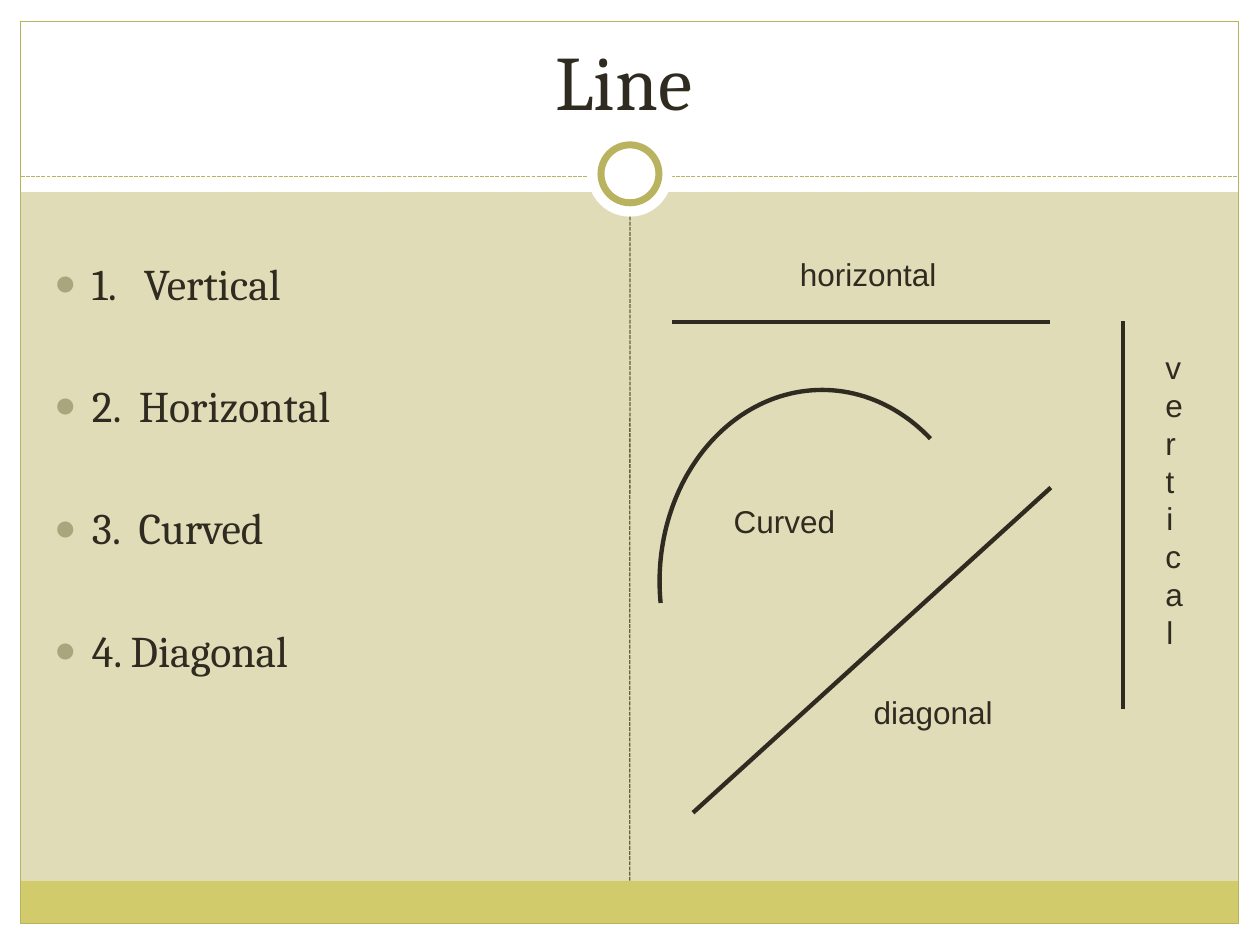
"""Build the "Line" slide: a list of line types beside a drawn example of each."""
import lxml.etree
import pptx
import pptx.dml.color
import pptx.enum.dml
import pptx.enum.shapes
import pptx.enum.text
import pptx.oxml.ns
import pptx.util

COLOURS = {"sand": "DFDCB7", "white": "FFFFFF", "band": "D2CB6C", "olive": "B9B35F",
           "brown": "675E47", "ink": "2F2B20", "bullet": "A9A57C"}
COLOURS_RGB = {name: pptx.dml.color.RGBColor.from_string(value) for name, value in COLOURS.items()}
SHAPES = pptx.enum.shapes.MSO_SHAPE
ALIGN = pptx.enum.text.PP_ALIGN
SYSTEM_DASH = pptx.enum.dml.MSO_LINE.SQUARE_DOT

presentation = pptx.Presentation()
presentation.slide_width = pptx.util.Inches(10)
presentation.slide_height = pptx.util.Inches(7.5)
column = presentation.slide_width / 100
row = presentation.slide_height / 75

slide = presentation.slides.add_slide(presentation.slide_layouts[1])
slide.background.fill.solid()
slide.background.fill.fore_color.rgb = COLOURS_RGB["white"]


def grid(left, top, width, height):
    """Turn columns and rows into slide lengths."""
    return [int(left * column), int(top * row), int(width * column), int(height * row)]


def write(shape, text, size, font, **paragraph_format):
    """Fill a shape with one formatted paragraph per item of text."""
    frame = shape.text_frame
    frame.word_wrap = True
    frame.auto_size = pptx.enum.text.MSO_AUTO_SIZE.NONE
    frame.text = text
    for paragraph in frame.paragraphs:
        for name, value in paragraph_format.items():
            setattr(paragraph, name, value)
        for name, value in {"size": pptx.util.Pt(size), "name": font}.items():
            setattr(paragraph.font, name, value)
        paragraph.font.color.rgb = COLOURS_RGB["ink"]
    return frame.paragraphs


margin, right_edge, header, footer = 1.65, 98.3, 15.25, 69.9
inner_width = right_edge - margin
middle = 50
shapes = {}
for name, kind, place, fill, line, weight in [
    ("panel", SHAPES.RECTANGLE, (margin, header, inner_width, footer - header), "sand", None, 0),
    ("footer", SHAPES.RECTANGLE, (margin, footer, inner_width, 3.4), "band", None, 0),
    ("frame", SHAPES.RECTANGLE, (margin, 1.7, inner_width, 71.6), None, "olive", 0.75),
    ("header rule", None, (margin, 14, right_edge, 14), None, "olive", 0.75),
    ("disc", SHAPES.OVAL, (middle - 3.35, 10.5, 6.7, 6.7), "white", None, 0),
    ("ring", SHAPES.OVAL, (middle - 2.3, 11.5, 4.6, 4.6), "white", "olive", 4),
    ("divider", None, (49.9, footer, middle, 17.2), None, "brown", 0.75),
    ("horizontal", None, (53.35, 25.55, 83.35, 25.55), None, "ink", 2.5),
    ("vertical", None, (89.15, 25.5, 89.15, 56.3), None, "ink", 2.5),
    ("diagonal", None, (55, 64.5, 83.4, 38.7), None, "ink", 2.5),
    ("curve", SHAPES.ARC, (52.35, 30.95, 25.8, 30.4), None, "ink", 2.5),
]:
    if kind is None:
        shape = slide.shapes.add_connector(pptx.enum.shapes.MSO_CONNECTOR.STRAIGHT, *grid(*place))
    else:
        shape = slide.shapes.add_shape(kind, *grid(*place))
        shape.shadow.inherit = False
        if fill:
            shape.fill.solid()
            shape.fill.fore_color.rgb = COLOURS_RGB[fill]
        else:
            shape.fill.background()
    if line:
        shape.line.color.rgb = COLOURS_RGB[line]
        shape.line.width = pptx.util.Pt(weight)
    else:
        shape.line.fill.background()
    if name in ("header rule", "divider"):
        shape.line.dash_style = SYSTEM_DASH
    if kind is None:
        lxml.etree.SubElement(shape._element.spPr, pptx.oxml.ns.qn("a:effectLst"))
    shapes[name] = shape

shapes["divider"].begin_connect(shapes["footer"], 0)
degree = 0.6
for index, angle in enumerate((172.4, 307.2)):
    shapes["curve"].adjustments[index] = angle * degree

title, body = slide.shapes.title, slide.placeholders[1]
for placeholder, place in ((title, (4.5, 1.8, 90, 9)), (body, (3.3, 19.85, 44.2, 46.3))):
    placeholder.left, placeholder.top, placeholder.width, placeholder.height = grid(*place)
    slide.shapes.element.append(placeholder._element)

write(title, "Line", 44, "Cambria", alignment=ALIGN.CENTER)
title.text_frame.vertical_anchor = pptx.enum.text.MSO_ANCHOR.MIDDLE

items = ["1.\tVertical", "2.\tHorizontal", "3.\tCurved", "4. Diagonal"]
tab_columns = [7.12, 6.72, 6.7, None]
paragraphs = write(body, "\n".join(items), 25, "Cambria", alignment=ALIGN.LEFT,
                   space_before=pptx.util.Pt(0), space_after=pptx.util.Pt(39.9))
for paragraph, tab_column in zip(paragraphs, tab_columns):
    properties = paragraph._p.get_or_add_pPr()
    properties.set("marL", str(int(3 * column)))
    properties.set("indent", str(int(-3 * column)))
    bullet_colour = lxml.etree.SubElement(properties, pptx.oxml.ns.qn("a:buClr"))
    bullet_parts = [(bullet_colour, "a:srgbClr", {"val": COLOURS["bullet"]}),
                    (properties, "a:buSzPct", {"val": "85000"}),
                    (properties, "a:buFont", {"typeface": "Arial"}),
                    (properties, "a:buChar", {"char": "●"})]
    if tab_column:
        tabs = lxml.etree.Element(pptx.oxml.ns.qn("a:tabLst"))
        bullet_parts.append((tabs, "a:tab", {"pos": str(int(tab_column * column)), "algn": "l"}))
    for parent, tag, attributes in bullet_parts:
        lxml.etree.SubElement(parent, pptx.oxml.ns.qn(tag), attributes)
    if tab_column:
        properties.append(tabs)
    default_font = properties.find(pptx.oxml.ns.qn("a:defRPr"))
    if default_font is not None:
        properties.append(default_font)

for text, place, alignment in [
    ("horizontal", (62.5, 19.75, 15, 4), ALIGN.LEFT),
    ("vertical", (91.5, 27.15, 2.7, 25), ALIGN.CENTER),
    ("diagonal", (68.35, 54.5, 12.5, 4), ALIGN.LEFT),
    ("Curved", (57.25, 39.35, 15, 4), ALIGN.LEFT),
]:
    write(slide.shapes.add_textbox(*grid(*place)), text, 18, "Arial", alignment=alignment)

presentation.save("out.pptx")
